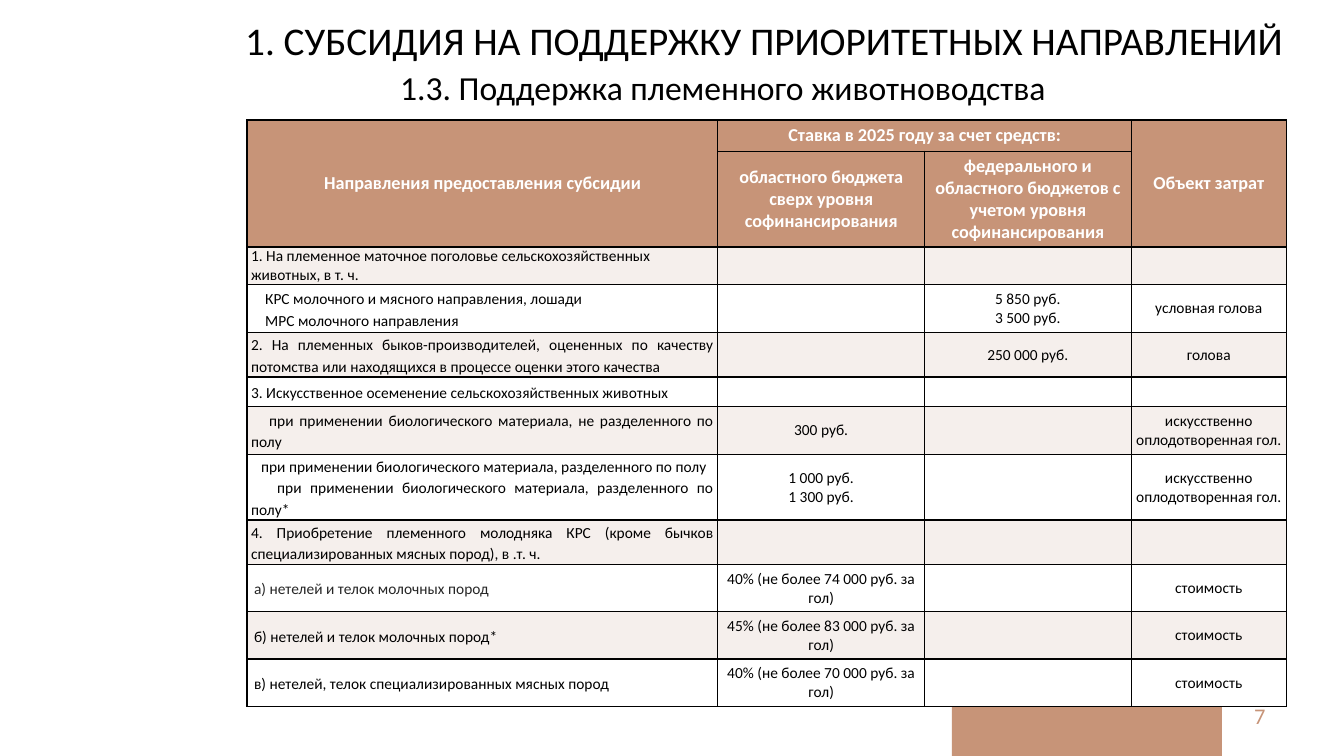
from lxml.etree import SubElement
from pptx import Presentation
from pptx.dml.color import RGBColor
from pptx.enum.shapes import MSO_SHAPE
from pptx.enum.text import MSO_ANCHOR, PP_ALIGN
from pptx.oxml.ns import qn
from pptx.util import Inches, Pt

FONT = "Calibri"
ACCENT, BAND, WHITE, BLACK, DARK = "C79478", "F5EFEC", "FFFFFF", "000000", "262626"
LEFT, CENTER, RIGHT, JUSTIFY = PP_ALIGN.LEFT, PP_ALIGN.CENTER, PP_ALIGN.RIGHT, PP_ALIGN.JUSTIFY

COLUMNS = [4.67, 2.05, 2.05, 1.54]
ROWS = [0.31, 0.95, 0.37, 0.48, 0.44, 0.29, 0.48, 0.65, 0.44, 0.47, 0.47, 0.47]
HEADER = [  # row, column, last row, last column, text, inset
    (0, 0, 1, 0, "Направления предоставления субсидии", 0.04),
    (0, 1, 0, 2, "Ставка в 2025 году за счет средств:", 0.04),
    (0, 3, 1, 3, "Объект затрат", 0.04),
    (1, 1, 1, 1, "областного бюджета\nсверх уровня софинансирования", 0),
    (1, 2, 1, 2, "федерального и областного бюджетов с учетом уровня софинансирования", 0),
]
INSEMINATED = "искусственно оплодотворенная гол."
BODY = [  # direction, its format, regional rate, joint rate, cost object
    ("1. На племенное маточное поголовье сельскохозяйственных животных, в т. ч.",
     dict(spacing=1.0), "", "", ""),
    ("КРС молочного и мясного направления, лошади\nМРС молочного направления",
     dict(indents=[0.14, 0.14]), "", "5 850 руб.\n3 500 руб.", "условная голова"),
    ("2. На племенных быков-производителей, оцененных по качеству потомства "
     "или находящихся в процессе оценки этого качества",
     dict(align=JUSTIFY), "", "250 000 руб.", "голова"),
    ("3. Искусственное осеменение сельскохозяйственных животных", {}, "", "", ""),
    ("при применении биологического материала, не разделенного по полу",
     dict(align=JUSTIFY, indents=[0.18]), "300 руб.", "", INSEMINATED),
    ("при применении биологического материала, разделенного по полу\n"
     "при применении биологического материала, разделенного по полу*",
     dict(align=JUSTIFY, indents=[0.1, 0.26]), "1 000 руб.\n1 300 руб.", "", INSEMINATED),
    ("4. Приобретение племенного молодняка КРС (кроме бычков "
     "специализированных мясных пород), в .т. ч.", dict(align=JUSTIFY), "", "", ""),
    ("а) нетелей и телок молочных пород",
     dict(align=JUSTIFY, indents=[0.03], color=DARK),
     "40% (не более 74 000 руб. за гол)", "", "стоимость"),
    ("б) нетелей и телок молочных пород*", dict(align=JUSTIFY, indents=[0.03]),
     "45% (не более 83 000 руб. за гол)", "", "стоимость"),
    ("в) нетелей, телок специализированных мясных пород",
     dict(align=JUSTIFY, indents=[0.03]),
     "40% (не более 70 000 руб. за гол)", "", "стоимость"),
]


def rgb(color):
    return RGBColor.from_string(color)


def write(frame, text, size=11, color=BLACK, bold=False, align=CENTER, spacing=1.0, indents=()):
    """Fill a text frame, one paragraph a line; indents are first-line inches."""
    frame.word_wrap = True
    for number, line in enumerate(text.split("\n")):
        paragraph = frame.add_paragraph() if number else frame.paragraphs[0]
        paragraph.alignment = align
        paragraph.line_spacing = spacing
        paragraph.space_before = Pt(0)
        if indents:
            properties = paragraph._p.get_or_add_pPr()
            properties.set("marL", "0")
            properties.set("indent", str(Inches(indents[number])))
        if not line:
            SubElement(paragraph._p, qn("a:endParaRPr"), sz=str(size * 100))
            continue
        run = paragraph.add_run()
        run.text = line
        run.font.name, run.font.size, run.font.bold = FONT, Pt(size), bold
        run.font.color.rgb = rgb(color)


def place(shape, left, top, width, height):
    shape.left, shape.top = Inches(left), Inches(top)
    shape.width, shape.height = Inches(width), Inches(height)


def style_cell(cell, fill, across=0.04, down=0.0):
    """Draw thin black borders, then set fill and insets."""
    properties = cell._tc.get_or_add_tcPr()
    for side in ("lnL", "lnR", "lnT", "lnB"):
        line = SubElement(properties, qn(f"a:{side}"), w=str(Pt(1)))
        SubElement(SubElement(line, qn("a:solidFill")), qn("a:srgbClr"), val=BLACK)
    cell.fill.solid()
    cell.fill.fore_color.rgb = rgb(fill)
    cell.margin_left = cell.margin_right = Inches(across)
    cell.margin_top = cell.margin_bottom = Inches(down)
    cell.vertical_anchor = MSO_ANCHOR.MIDDLE


def add_headings(slide):
    place(slide.shapes.title, 2.26, 0.11, 10.63, 0.57)
    slide.shapes.title.text_frame.vertical_anchor = MSO_ANCHOR.TOP
    write(slide.shapes.title.text_frame,
          "1. СУБСИДИЯ НА ПОДДЕРЖКУ ПРИОРИТЕТНЫХ НАПРАВЛЕНИЙ", size=28)
    subtitle = slide.shapes.add_textbox(Inches(3.56), Inches(0.61), Inches(7.22), Inches(0.5))
    write(subtitle.text_frame, "1.3. Поддержка племенного животноводства", size=24)


def add_footer(slide, left, top, width, height):
    block = slide.shapes.add_shape(MSO_SHAPE.RECTANGLE, 0, 0, 0, 0)
    place(block, left, top, width, height)
    block.shadow.inherit = False
    block.fill.solid()
    block.fill.fore_color.rgb = rgb(ACCENT)
    block.line.fill.background()
    number = slide.shapes.add_textbox(0, 0, 0, 0)
    place(number, left + 0.21, top + 0.34, 3, 0.4)
    number.text_frame.vertical_anchor = MSO_ANCHOR.MIDDLE
    write(number.text_frame, "7", size=16, color=ACCENT, align=RIGHT)


def add_rates_table(slide, left, top):
    frame = slide.shapes.add_table(len(ROWS), len(COLUMNS), Inches(left), Inches(top),
                                   Inches(sum(COLUMNS)), Inches(sum(ROWS)))
    table = frame.table
    for column, width in zip(table.columns, COLUMNS):
        column.width = Inches(width)
    for row, height in zip(table.rows, ROWS):
        row.height = Inches(height)

    for row in range(2):
        for column in range(len(COLUMNS)):
            style_cell(table.cell(row, column), ACCENT)
    for row, column, last_row, last_column, text, inset in HEADER:
        cell = table.cell(row, column)
        if (row, column) != (last_row, last_column):
            cell.merge(table.cell(last_row, last_column))
        cell.margin_left = cell.margin_right = Inches(inset)
        cell.margin_top = cell.margin_bottom = Inches(inset)
        write(cell.text_frame, text, size=13, color=WHITE, bold=True)

    for row, (direction, style, *values) in enumerate(BODY, start=2):
        fill = WHITE if row % 2 else BAND
        style_cell(table.cell(row, 0), fill)
        write(table.cell(row, 0).text_frame, direction,
              **{"align": LEFT, "spacing": 1.15, **style})
        for column, value in enumerate(values, start=1):
            cell = table.cell(row, column)
            style_cell(cell, fill, across=0 if "%" in value else 0.04, down=0.05 if value else 0)
            write(cell.text_frame, value)


def main():
    presentation = Presentation()
    presentation.slide_width, presentation.slide_height = Inches(13.33), Inches(7.5)
    slide = presentation.slides.add_slide(presentation.slide_layouts[5])
    add_footer(slide, 9.44, 6.56, 2.68, 0.94)
    add_rates_table(slide, 2.45, 1.19)
    add_headings(slide)
    presentation.save("out.pptx")


if __name__ == "__main__":
    main()
